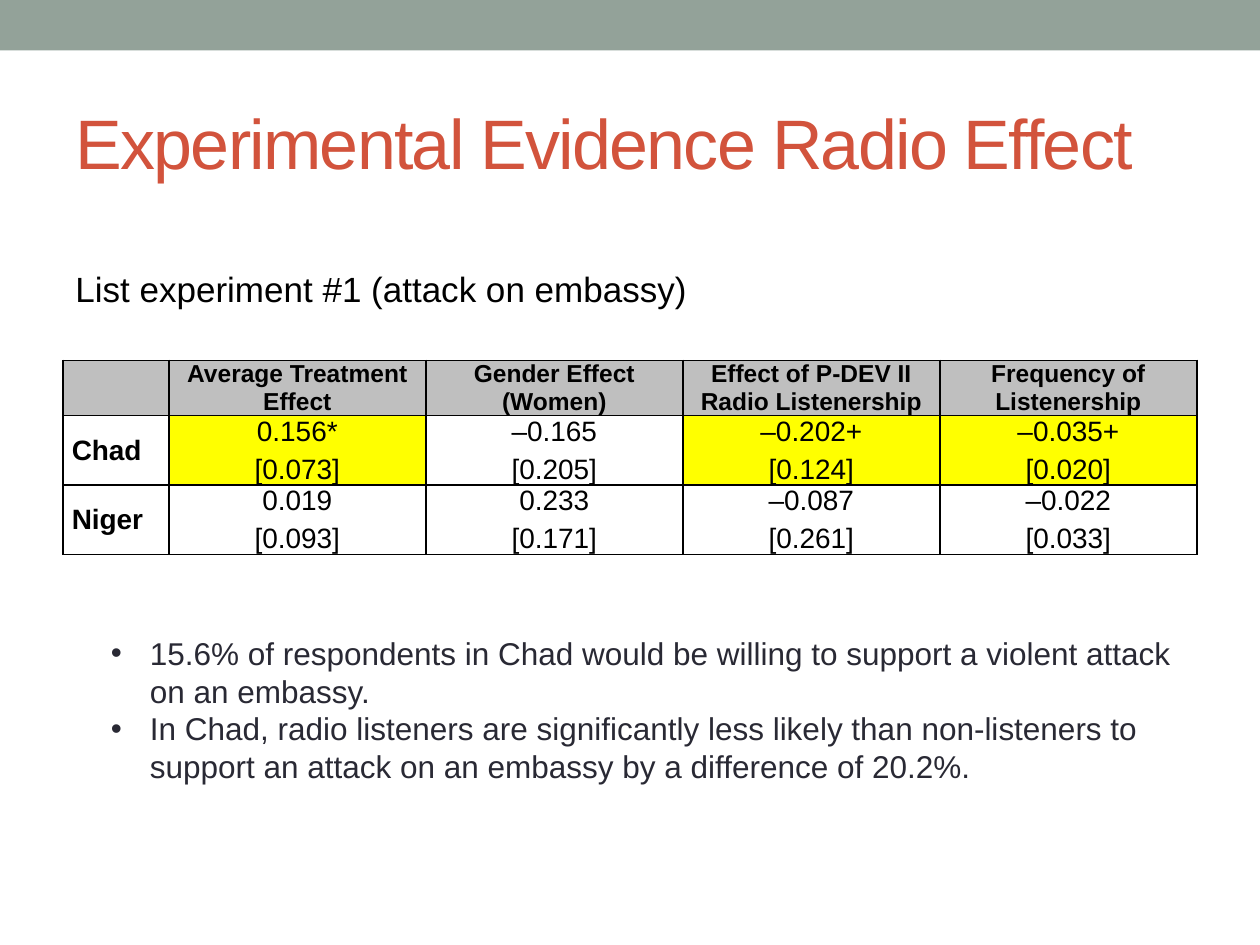
from pptx import Presentation
from pptx.dml.color import RGBColor
from pptx.enum.shapes import MSO_SHAPE as Shape
from pptx.enum.text import MSO_ANCHOR as Anchor, MSO_AUTO_SIZE as AutoSize, PP_ALIGN as Align
from pptx.oxml import parse_xml
from pptx.oxml.ns import nsdecls
from pptx.util import Inches, Pt

BLACK = RGBColor(0x00, 0x00, 0x00)
SAGE = RGBColor(0x93, 0xA2, 0x99)
RUST = RGBColor(0xD2, 0x53, 0x3C)
INK = RGBColor(0x29, 0x29, 0x34)
GRAY = RGBColor(0xBF, 0xBF, 0xBF)
YELLOW = RGBColor(0xFF, 0xFF, 0x00)

HEADINGS = [
    "Average Treatment\nEffect",
    "Gender Effect\n(Women)",
    "Effect of P-DEV II\nRadio Listenership",
    "Frequency of Listenership",
]
RESULTS = {
    "Chad": [("0.156*", "[0.073]", 0.06), ("–0.165", "[0.205]", 0.31),
             ("–0.202+", "[0.124]", 0.18), ("–0.035+", "[0.020]", 0.18)],
    "Niger": [("0.019", "[0.093]", 0.18), ("0.233", "[0.171]", 0.18),
              ("–0.087", "[0.261]", 0.18), ("–0.022", "[0.033]", 0.18)],
}
FINDINGS = [
    "15.6% of respondents in Chad would be willing to support a violent attack on an embassy.",
    "In Chad, radio listeners are significantly less likely than non-listeners to "
    "support an attack on an embassy by a difference of 20.2%.",
]


def write(frame, text, size, color=BLACK, bold=False, align=Align.LEFT,
          before=0, after=0, anchor=Anchor.MIDDLE):
    frame.word_wrap = True
    frame.vertical_anchor = anchor
    frame.text = text
    for para in frame.paragraphs:
        para.alignment = align
        para.space_before, para.space_after = Pt(before), Pt(after)
        for span in para.runs:
            span.font.name = "Arial"
            span.font.size = Pt(size)
            span.font.bold = bold
            span.font.color.rgb = color


def indent(para, first_line, margin=0):
    properties = para._p.get_or_add_pPr()
    properties.set("marL", str(Inches(margin)))
    properties.set("indent", str(Inches(first_line)))
    return properties


def place(box, left, top, width, height):
    box.left, box.top = Inches(left), Inches(top)
    box.width, box.height = Inches(width), Inches(height)


def add_band(page):
    band = page.shapes.add_shape(Shape.RECTANGLE, 0, 0, Inches(10), Inches(0.4))
    band.shadow.inherit = False
    band.fill.solid()
    band.fill.fore_color.rgb = SAGE
    band.line.fill.background()


def set_title(page, text):
    title = page.shapes.title
    place(title, 0.5, 0.58, 9, 1.08)
    write(title.text_frame, text, 40, RUST)
    title.text_frame.auto_size = AutoSize.NONE
    for span in title.text_frame.paragraphs[0].runs:
        span.font._element.set("spc", "-100")


def add_caption(page, text):
    box = page.shapes.add_textbox(Inches(0.5), Inches(2.07), Inches(9), Inches(0.44))
    write(box.text_frame, text, 20)


def set_findings(page, findings):
    body = page.placeholders[1]
    place(body, 0.78, 4.98, 8.72, 1.62)
    write(body.text_frame, "\n".join(findings), 18, INK, anchor=Anchor.TOP)
    body.text_frame.auto_size = AutoSize.NONE
    for para in body.text_frame.paragraphs:
        properties = indent(para, -0.31, 0.31)
        properties.append(parse_xml(f'<a:buFont {nsdecls("a")} typeface="Arial"/>'))
        properties.append(parse_xml(f'<a:buChar {nsdecls("a")} char="•"/>'))


def style_cell(cell, fill=None):
    cell.margin_left = cell.margin_right = Inches(0.07)
    cell.margin_top = cell.margin_bottom = 0
    properties = cell._tc.get_or_add_tcPr()
    for side in ("lnL", "lnR", "lnT", "lnB"):
        properties.append(parse_xml(
            f'<a:{side} {nsdecls("a")} w="{Pt(1)}"><a:solidFill>'
            f'<a:srgbClr val="{BLACK}"/></a:solidFill></a:{side}>'))
    if fill is None:
        cell.fill.background()
    else:
        cell.fill.solid()
        cell.fill.fore_color.rgb = fill


def write_estimate(cell, estimate, error, shift):
    style_cell(cell, YELLOW if estimate.endswith(("*", "+")) else None)
    write(cell.text_frame, f"{estimate}\n{error}", 16,
          align=Align.CENTER, before=2, after=2)
    cell.vertical_anchor = Anchor.MIDDLE
    indent(cell.text_frame.paragraphs[0], -shift)


def write_label(cell, text, size, fill=None, **layout):
    style_cell(cell, fill)
    write(cell.text_frame, text, size, bold=True, **layout)
    cell.vertical_anchor = Anchor.MIDDLE


def add_results(page):
    table = page.shapes.add_table(
        len(RESULTS) + 1, len(HEADINGS) + 1,
        Inches(0.5), Inches(2.86), Inches(9), Inches(1.54)).table
    table.horz_banding = False
    for index, column in enumerate(table.columns):
        column.width = Inches(2.04 if index else 0.84)
    for index, row in enumerate(table.rows):
        row.height = Inches(0.55 if index else 0.44)
    for index, heading in enumerate(["", *HEADINGS]):
        write_label(table.cell(0, index), heading, 14, GRAY, align=Align.CENTER)
    for row, (country, estimates) in enumerate(RESULTS.items(), 1):
        write_label(table.cell(row, 0), country, 16, before=2)
        for column, values in enumerate(estimates, 1):
            write_estimate(table.cell(row, column), *values)


def main():
    deck = Presentation()
    deck.slide_width, deck.slide_height = Inches(10), Inches(7.5)
    page = deck.slides.add_slide(deck.slide_layouts[1])
    add_band(page)
    set_title(page, "Experimental Evidence Radio Effect")
    add_results(page)
    add_caption(page, "List experiment #1 (attack on embassy)")
    set_findings(page, FINDINGS)
    deck.save("out.pptx")


if __name__ == "__main__":
    main()
